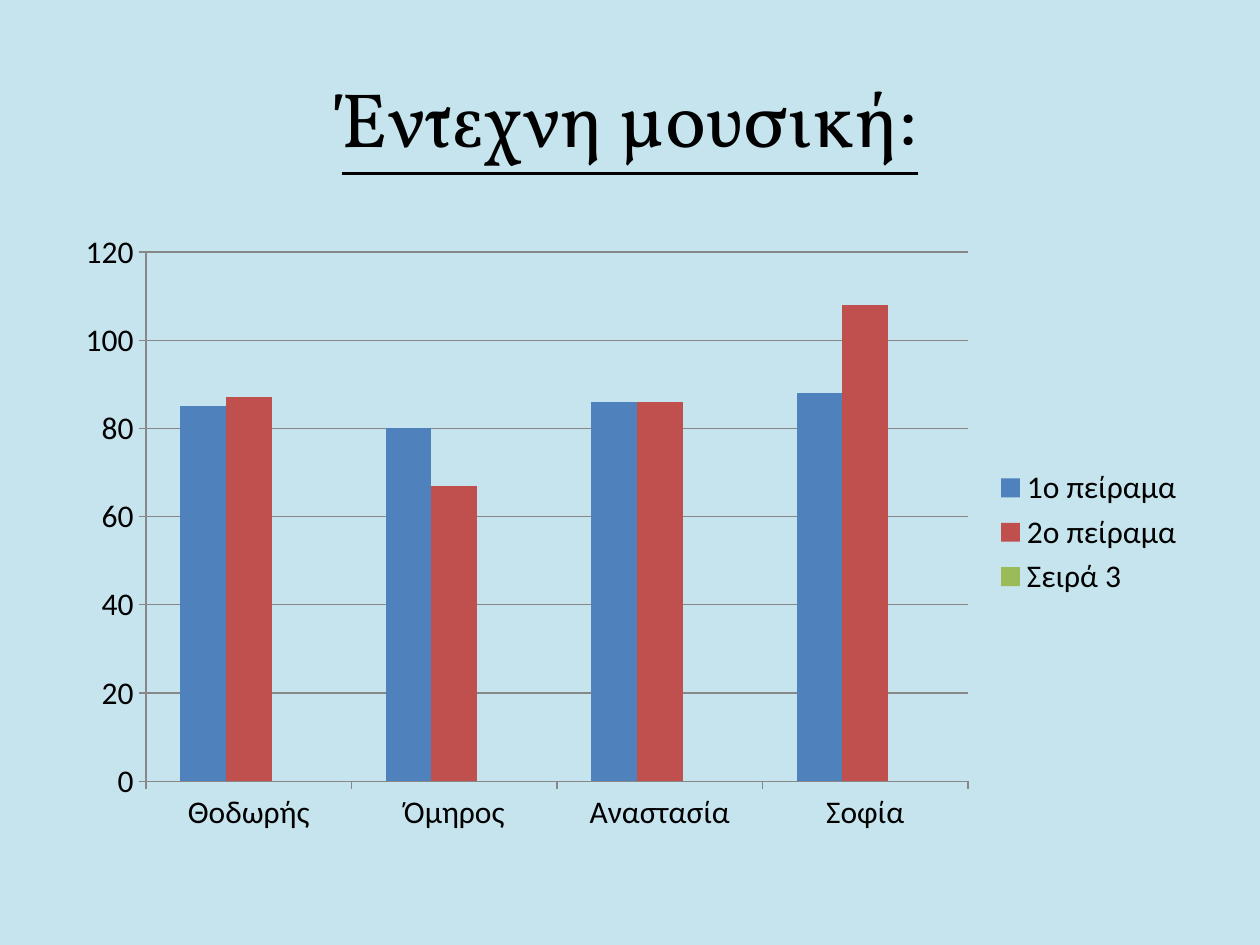
from pptx import Presentation
from pptx.chart.data import CategoryChartData
from pptx.dml.color import RGBColor
from pptx.enum.chart import XL_CHART_TYPE, XL_LEGEND_POSITION, XL_TICK_MARK
from pptx.enum.text import MSO_ANCHOR, PP_ALIGN
from pptx.util import Inches, Pt

BACKGROUND = "C5E4ED"
TEXT = "000000"
AXIS = "878787"
NAMES = ["Θοδωρής", "Όμηρος", "Αναστασία", "Σοφία"]
EXPERIMENTS = [
    ("1ο πείραμα", [85, 80, 86, 88], "4F81BD"),
    ("2ο πείραμα", [87, 67, 86, 108], "C0504D"),
    ("Σειρά 3", [None] * len(NAMES), "9BBB59"),
]


def paint(color_format, color):
    """Set a colour format from a hex string."""
    color_format.rgb = RGBColor.from_string(color)


def set_background(slide, color):
    """Fill the slide background with one colour."""
    fill = slide.background.fill
    fill.solid()
    paint(fill.fore_color, color)


def add_title(slide, wording):
    """Add the underlined, centred title."""
    title = slide.shapes.add_textbox(Inches(0.5), Inches(0.3), Inches(9), Inches(1.25))
    frame = title.text_frame
    frame.word_wrap = True
    frame.vertical_anchor = MSO_ANCHOR.MIDDLE
    frame.text = wording
    heading = frame.paragraphs[0]
    heading.alignment = PP_ALIGN.CENTER
    font = heading.runs[0].font
    font.name = "Vollkorn"
    font.size = Pt(44)
    font.underline = True
    paint(font.color, TEXT)


def style_line(line):
    """Draw an axis or grid line thin and grey."""
    line.width = Pt(0.75)
    paint(line.color, AXIS)


def add_results_chart(slide):
    """Add the clustered columns that compare the experiments."""
    results = CategoryChartData()
    results.categories = NAMES
    for name, values, _ in EXPERIMENTS:
        results.add_series(name, values)
    chart = slide.shapes.add_chart(
        XL_CHART_TYPE.COLUMN_CLUSTERED,
        Inches(0.5), Inches(1.75), Inches(9), Inches(4.95), results,
    ).chart
    chart.has_title = False
    chart.font.name = "Calibri"
    chart.font.size = Pt(18)
    paint(chart.font.color, TEXT)

    chart.has_legend = True
    chart.legend.position = XL_LEGEND_POSITION.RIGHT
    chart.legend.include_in_layout = False

    for axis in (chart.category_axis, chart.value_axis):
        axis.major_tick_mark = XL_TICK_MARK.OUTSIDE
        style_line(axis.format.line)
    scale = chart.value_axis
    scale.minimum_scale, scale.maximum_scale, scale.major_unit = 0, 120, 20
    scale.has_major_gridlines = True
    style_line(scale.major_gridlines.format.line)

    columns = chart.plots[0]
    columns.gap_width = 150
    columns.overlap = 0
    columns.vary_by_categories = False
    for series, (_, _, color) in zip(columns.series, EXPERIMENTS):
        series.format.fill.solid()
        paint(series.format.fill.fore_color, color)


def main():
    """Build the slide and save it."""
    presentation = Presentation()
    presentation.slide_width = Inches(10)
    presentation.slide_height = Inches(7.5)
    slide = presentation.slides.add_slide(presentation.slide_layouts[6])
    set_background(slide, BACKGROUND)
    add_title(slide, "Έντεχνη μουσική:")
    add_results_chart(slide)
    presentation.save("out.pptx")


if __name__ == "__main__":
    main()
